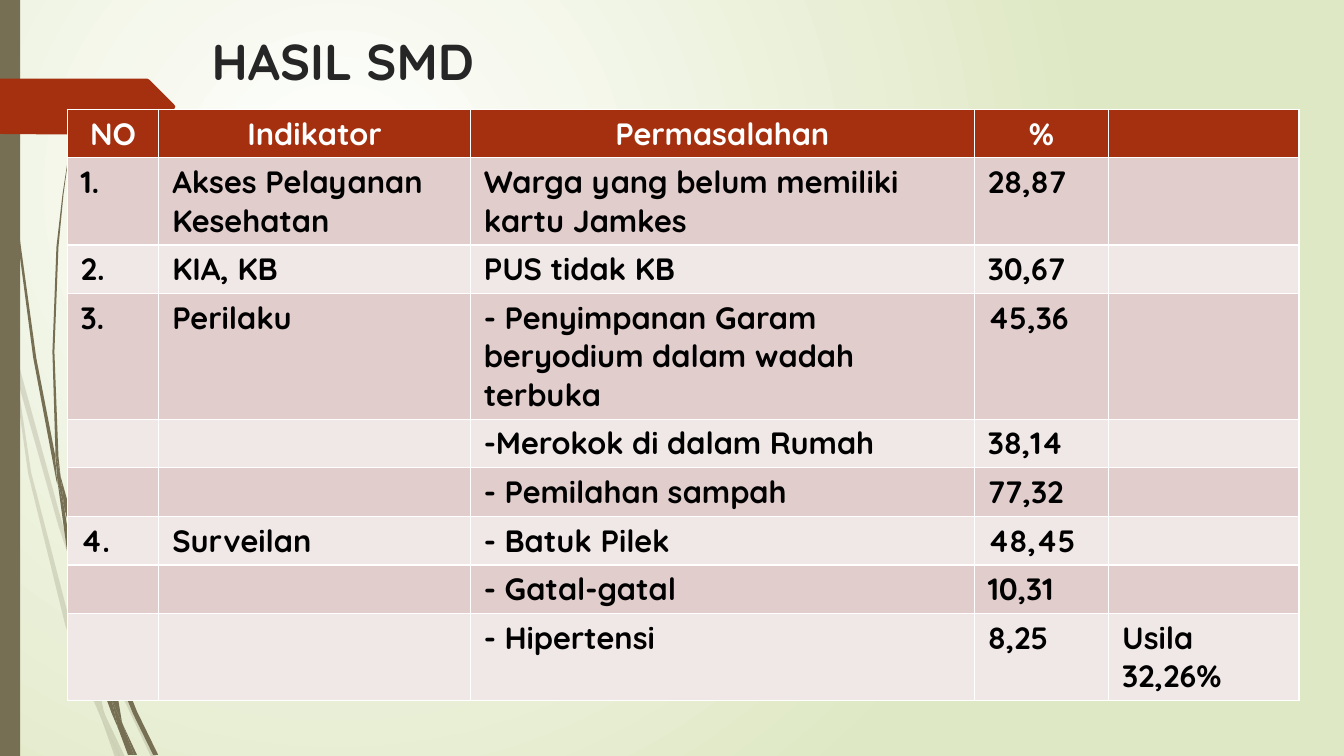
from pptx import Presentation
from pptx.dml.color import RGBColor
from pptx.enum.shapes import MSO_SHAPE
from pptx.enum.text import MSO_ANCHOR, MSO_AUTO_SIZE, PP_ALIGN
from pptx.oxml.ns import qn
from pptx.util import Pt
from lxml import etree

RECTANGLE = MSO_SHAPE.RECTANGLE
LEFT, CENTER = PP_ALIGN.LEFT, PP_ALIGN.CENTER
TOP = MSO_ANCHOR.TOP
NO_FIT = MSO_AUTO_SIZE.NONE
TITLE_ONLY = 5
CELL_EDGES = ("a:lnL", "a:lnR", "a:lnT", "a:lnB")

RUST, OLIVE, WHITE = "A53010", "766F54", "FFFFFF"
ROW_FILLS = ("F0E8E7", "E1CDCC")

# Outlines of the grass blades, in hundredths of an inch
GRID = 0.72
PALE_BLADES = [
    [(11, 350), (9, 322), (0, 282), (0, 299), (10, 344)],
    [(58, 522), (84, 599), (85, 586), (62, 520), (14, 345), (17, 376)],
    [(92, 607), (88, 596), (88, 610), (123, 694), (150, 751), (155, 751), (127, 692)],
    [(119, 751), (124, 751), (105, 711)],
    [(93, 683), (70, 619), (31, 469), (17, 376), (11, 350), (28, 470), (65, 621),
     (92, 693), (101, 714), (99, 707)],
    [(84, 599), (87, 646), (93, 683), (96, 692), (105, 711), (103, 706), (91, 646),
     (88, 610), (88, 608)],
    [(88, 584), (110, 462), (160, 349), (229, 245), (268, 198), (290, 175), (312, 154),
     (312, 153), (289, 175), (268, 197), (228, 244), (158, 348), (107, 461), (85, 584),
     (85, 586), (88, 596)],
    [(101, 714), (114, 751), (119, 751)],
    [(88, 608), (88, 596), (85, 586), (84, 599)],
    [(96, 692), (93, 683), (99, 707), (101, 714), (119, 751), (105, 711)],
]
DARK_BLADES = [
    [(7, 110), (17, 233), (33, 355), (56, 477), (57, 481), (55, 457), (55, 453),
     (36, 355), (19, 232), (8, 109), (5, 48), (4, 0), (3, 0), (4, 48)],
    [(88, 592), (106, 645), (106, 631), (93, 590), (60, 472), (64, 505)],
    [(113, 649), (110, 641), (111, 656), (132, 708), (152, 749), (157, 749), (136, 706)],
    [(110, 691), (98, 657), (72, 556), (64, 505), (57, 477), (68, 557), (93, 659),
     (111, 708), (117, 722), (116, 717)],
    [(60, 472), (58, 453), (54, 349), (58, 245), (63, 193), (70, 141), (62, 193),
     (56, 245), (52, 349), (55, 449)],
    [(133, 749), (136, 749), (122, 719)],
    [(57, 477), (64, 505), (60, 472), (55, 449), (55, 453)],
    [(111, 633), (125, 552), (158, 476), (205, 406), (231, 374), (245, 359), (261, 344),
     (260, 344), (245, 358), (231, 373), (204, 405), (156, 474), (122, 551), (106, 631),
     (110, 641)],
    [(117, 722), (127, 749), (131, 749)],
    [(106, 645), (110, 691), (116, 706), (122, 719), (121, 716), (111, 656), (109, 651)],
    [(106, 645), (109, 651), (111, 656), (110, 641), (106, 631)],
    [(116, 706), (110, 691), (116, 717), (117, 722), (130, 749), (133, 749), (122, 719)],
]
TITLE_TAB = [(173, 108), (148, 133), (146, 134), (136, 134), (0, 133), (0, 78),
             (146, 78), (148, 79), (173, 104), (174, 106)]

COLUMN_WIDTHS = (65.5, 222.5, 360, 96, 136)
ROW_HEIGHT = 29.5
SURVEY_ROWS = [
    ("NO", "Indikator", "Permasalahan", "%", ""),
    ("1.", "Akses Pelayanan Kesehatan", "Warga yang belum memiliki kartu Jamkes", "28,87", ""),
    ("2.", "KIA, KB", "PUS tidak KB", "30,67", ""),
    ("3.", "Perilaku", "- Penyimpanan Garam beryodium dalam wadah terbuka", "45,36", ""),
    ("", "", "-Merokok di dalam Rumah", "38,14", ""),
    ("", "", "- Pemilahan sampah", "77,32", ""),
    ("4.", "Surveilan", "- Batuk Pilek", "48,45", ""),
    ("", "", "- Gatal-gatal", "10,31", ""),
    ("", "", "- Hipertensi", "8,25", "Usila 32,26%"),
]


def color(value):
    return RGBColor.from_string(value)


def write(frame, text, size=22, fill="000000", align=LEFT, bold=True, font="Quicksand"):
    para = frame.paragraphs[0]
    para.alignment = align
    span = para.add_run()
    span.text = text
    span.font.name = font
    span.font.size = Pt(size)
    span.font.bold = bold
    span.font.color.rgb = color(fill)


class SlideBuilder:
    """Draws the elements of one slide in a shared style."""

    def __init__(self, page):
        self.page = page

    def background(self, inner, outer):
        """Fill the page with a round gradient from inner to outer colour."""
        fill = self.page.background.fill
        fill.gradient()
        for stop, value in zip(fill.gradient_stops, (inner, outer)):
            stop.color.rgb = color(value)
        gradient = self.page.element.find(".//" + qn("a:gradFill"))
        gradient.remove(gradient.find(qn("a:lin")))
        circle = etree.SubElement(gradient, qn("a:path"), path="circle")
        etree.SubElement(circle, qn("a:fillToRect"),
                         l="50000", t="50000", r="100000", b="100000")

    def paint(self, shape, fill, opacity=100):
        shape.shadow.inherit = False
        shape.fill.solid()
        shape.fill.fore_color.rgb = color(fill)
        shape.line.fill.background()
        if opacity < 100:
            tone = shape.fill._xPr.find(".//" + qn("a:srgbClr"))
            etree.SubElement(tone, qn("a:alpha"), val=str(opacity * 1000))

    def outline(self, points, fill, opacity=100):
        start, *rest = [(Pt(x * GRID), Pt(y * GRID)) for x, y in points]
        builder = self.page.shapes.build_freeform(*start)
        builder.add_line_segments(rest, close=True)
        self.paint(builder.convert_to_shape(), fill, opacity)

    def rectangle(self, left, top, width, height, fill):
        box = self.page.shapes.add_shape(
            RECTANGLE, Pt(left), Pt(top), Pt(width), Pt(height))
        self.paint(box, fill)

    def title(self, text, left, top, width, height):
        box = self.page.shapes.title
        box.left, box.top, box.width, box.height = Pt(left), Pt(top), Pt(width), Pt(height)
        frame = box.text_frame
        frame.word_wrap = True
        frame.auto_size = NO_FIT
        frame.vertical_anchor = TOP
        write(frame, text, size=36, fill="262626")

    def table(self, rows, widths, left, top):
        table = self.page.shapes.add_table(
            len(rows), len(widths), Pt(left), Pt(top),
            Pt(sum(widths)), Pt(ROW_HEIGHT * len(rows))).table
        table.horz_banding = False
        for column, width in zip(table.columns, widths):
            column.width = Pt(width)
        for number, texts in enumerate(rows):
            table.rows[number].height = Pt(ROW_HEIGHT)
            for cell, text in zip(table.rows[number].cells, texts):
                self.cell(cell, text, number)

    def cell(self, cell, text, number):
        header = number == 0
        cell.margin_left = cell.margin_right = Pt(9.6)
        cell.margin_top = cell.margin_bottom = Pt(3.6)
        properties = cell._tc.get_or_add_tcPr()
        for edge in CELL_EDGES:
            line = etree.SubElement(properties, qn(edge), w=str(Pt(1)))
            solid = etree.SubElement(line, qn("a:solidFill"))
            etree.SubElement(solid, qn("a:srgbClr"), val=WHITE)
        cell.fill.solid()
        cell.fill.fore_color.rgb = color(RUST if header else ROW_FILLS[number % 2])
        if text:
            write(cell.text_frame, text, fill=WHITE if header else "000000",
                  align=CENTER if header else LEFT)


def main():
    deck = Presentation()
    deck.slide_width, deck.slide_height = Pt(960), Pt(540)
    slide = SlideBuilder(deck.slides.add_slide(deck.slide_layouts[TITLE_ONLY]))
    slide.background(WHITE, "DFE8C4")
    for blades, opacity in ((PALE_BLADES, 20), (DARK_BLADES, 100)):
        for blade in blades:
            slide.outline(blade, OLIVE, opacity)
    slide.rectangle(0, 0, 14.4, 540, OLIVE)
    slide.outline(TITLE_TAB, RUST)
    slide.title("HASIL SMD", 144, 18, 864, 60)
    slide.table(SURVEY_ROWS, COLUMN_WIDTHS, 48, 78)
    deck.save("out.pptx")


if __name__ == "__main__":
    main()
